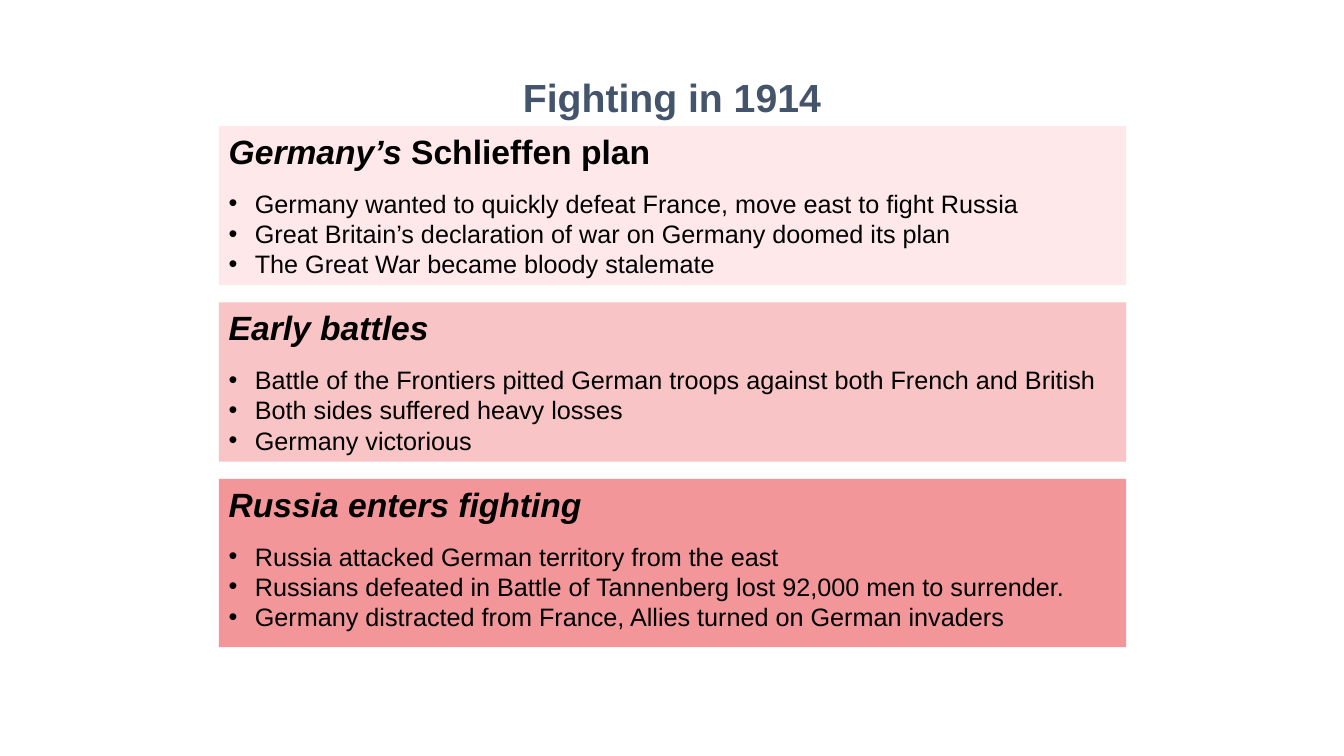
from lxml import etree
from pptx import Presentation
from pptx.dml.color import RGBColor
from pptx.enum.shapes import MSO_SHAPE
from pptx.enum.text import MSO_ANCHOR, PP_ALIGN
from pptx.oxml.ns import qn
from pptx.util import Inches, Pt

PANEL_TOP = 1.25
PANEL_STEP = 1.75

# Each panel: fill, height, heading runs as (text, italic), bullet lines
PANELS = [
    ("FEE8EA", 1.58, [("Germany’s ", True), ("Schlieffen plan", False)], [
        "Germany wanted to quickly defeat France, move east to fight Russia",
        "Great Britain’s declaration of war on Germany doomed its plan",
        "The Great War became bloody stalemate",
    ]),
    ("F8C4C5", 1.58, [("Early battles", True)], [
        "Battle of the Frontiers pitted German troops against both French and British",
        "Both sides suffered heavy losses",
        "Germany victorious",
    ]),
    ("F29699", 1.67, [("Russia enters fighting", True)], [
        "Russia attacked German territory from the east",
        "Russians defeated in Battle of Tannenberg lost 92,000 men to surrender.",
        "Germany distracted from France, Allies turned on German invaders",
    ]),
]


def add_run(paragraph, text, size, color="000000", bold=False, italic=False):
    run = paragraph.add_run()
    run.text = text
    font = run.font
    font.name = "Arial"
    font.size = Pt(size)
    font.bold = bold
    font.italic = italic
    font.color.rgb = RGBColor.from_string(color)


def add_bullet(paragraph):
    properties = paragraph._p.get_or_add_pPr()
    properties.set("marL", str(Inches(0.26)))
    properties.set("indent", str(Inches(-0.26)))
    bullet_font = etree.SubElement(properties, qn("a:buFont"))
    bullet_font.set("typeface", "Arial")
    etree.SubElement(properties, qn("a:buChar")).set("char", "•")


presentation = Presentation()
presentation.slide_width = Inches(13.33)
presentation.slide_height = Inches(7.5)
slide = presentation.slides.add_slide(presentation.slide_layouts[5])

title = slide.shapes.title
title.left, title.top = Inches(2.33), Inches(0.67)
title.width, title.height = Inches(8.67), Inches(0.58)
title.text_frame.vertical_anchor = MSO_ANCHOR.MIDDLE
title_paragraph = title.text_frame.paragraphs[0]
title_paragraph.alignment = PP_ALIGN.CENTER
add_run(title_paragraph, "Fighting in 1914", 28, "44546A", bold=True)

for index, (fill, height, heading_runs, bullets) in enumerate(PANELS):
    panel = slide.shapes.add_shape(
        MSO_SHAPE.RECTANGLE, Inches(2.17), Inches(PANEL_TOP + index * PANEL_STEP),
        Inches(9), Inches(height))
    panel.shadow.inherit = False
    panel.fill.solid()
    panel.fill.fore_color.rgb = RGBColor.from_string(fill)
    panel.line.fill.background()

    text_frame = panel.text_frame
    text_frame.word_wrap = True
    text_frame.vertical_anchor = MSO_ANCHOR.TOP
    heading = text_frame.paragraphs[0]
    heading.alignment = PP_ALIGN.LEFT
    heading.space_after = Pt(12)
    for text, italic in heading_runs:
        add_run(heading, text, 24, bold=True, italic=italic)

    for text in bullets:
        paragraph = text_frame.add_paragraph()
        paragraph.alignment = PP_ALIGN.LEFT
        add_bullet(paragraph)
        add_run(paragraph, text, 18)

presentation.save("out.pptx")
